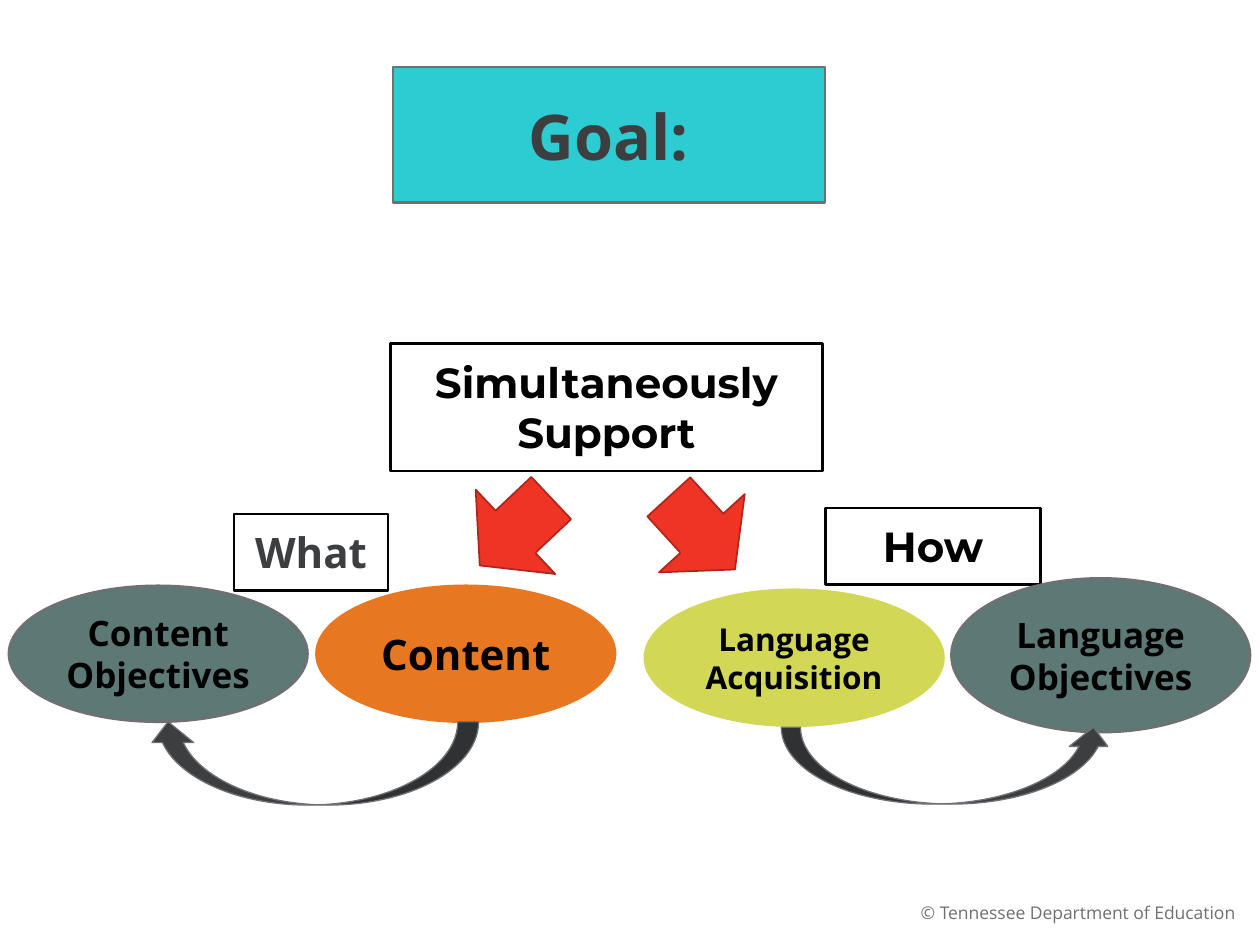
from pptx import Presentation
from pptx.dml.color import RGBColor
from pptx.enum.shapes import MSO_SHAPE as SHAPE
from pptx.enum.text import MSO_ANCHOR as ANCHOR, PP_ALIGN as ALIGN
from pptx.util import Cm, Pt

WHITE = RGBColor(0xFF, 0xFF, 0xFF)
BLACK = RGBColor(0, 0, 0)
CHARCOAL = RGBColor(0x3C, 0x3E, 0x40)
GRAY = RGBColor(0x6E, 0x70, 0x73)
TEAL = RGBColor(0x2D, 0xCC, 0xD3)
SLATE = RGBColor(0x5D, 0x79, 0x75)
ORANGE = RGBColor(0xE8, 0x77, 0x22)
LIME = RGBColor(0xD2, 0xD7, 0x55)
RED = RGBColor(0xEE, 0x34, 0x24)
DARK_RED = RGBColor(0xB0, 0x26, 0x1B)

SANS, DISPLAY = "Open Sans", "Montserrat"
OVAL_W, OVAL_H = 6.02, 2.74


def add_shape(slide, kind, box, fill, line, width=1.5):
    """Add a flat preset shape; box is left, top, width, height in cm."""
    sp = slide.shapes.add_shape(kind, *map(Cm, box))
    sp.shadow.inherit = False
    if fill is None:
        sp.fill.background()
    else:
        sp.fill.solid()
        sp.fill.fore_color.rgb = fill
    sp.line.color.rgb = line
    sp.line.width = Pt(width)
    return sp


def set_text(sp, text, size, color=BLACK, font=SANS, bold=True,
             align=ALIGN.CENTER, anchor=ANCHOR.MIDDLE):
    tf = sp.text_frame
    tf.word_wrap = True
    tf.vertical_anchor = anchor
    tf.margin_left = tf.margin_right = Cm(0.25)
    tf.margin_top = tf.margin_bottom = Cm(0.25)
    p = tf.paragraphs[0]
    p.text = text
    p.alignment = align
    p.font.name = font
    p.font.size = Pt(size)
    p.font.bold = bold
    p.font.color.rgb = color
    return p


def add_title(slide, box):
    sp = add_shape(slide, SHAPE.RECTANGLE, box, TEAL, GRAY)
    set_text(sp, "Goal:", 36, CHARCOAL)


def add_outlined_label(slide, box, text, color=BLACK, font=DISPLAY):
    sp = add_shape(slide, SHAPE.RECTANGLE, box, None, BLACK)
    set_text(sp, text, 24, color, font, anchor=ANCHOR.TOP)


def add_oval(slide, box, text, size, fill, line):
    set_text(add_shape(slide, SHAPE.OVAL, box, fill, line), text, size)


def add_curved_arrow(slide, box, flip=False):
    sp = add_shape(slide, SHAPE.CURVED_UP_ARROW, box, CHARCOAL, GRAY, 0.75)
    if flip:
        sp._element.spPr.xfrm.set("flipH", "1")


def add_red_arrow(slide, left, top, rotation):
    sp = add_shape(slide, SHAPE.RIGHT_ARROW, (left, top, 1.98, 2.34),
                   RED, DARK_RED, 1)
    sp.rotation = rotation


def add_content_branch(slide, x, y):
    add_outlined_label(slide, (x + 4.54, y + 0.81, 3.1, 1.55),
                       "What", CHARCOAL, SANS)
    add_oval(slide, (x + 6.2, y + 2.26, OVAL_W, OVAL_H),
             "Content", 24, ORANGE, ORANGE)
    add_oval(slide, (x, y + 2.26, OVAL_W, OVAL_H),
             "Content Objectives", 20, SLATE, GRAY)
    add_curved_arrow(slide, (x + 2.79, y + 5, 6.68, 1.68), flip=True)
    add_red_arrow(slide, x + 9.22, y, 136.7)


def add_language_branch(slide, x, y):
    add_outlined_label(slide, (x + 3.64, y + 0.66, 4.34, 1.55), "How")
    add_oval(slide, (x, y + 2.31, OVAL_W, OVAL_H),
             "Language Acquisition", 18, LIME, LIME)
    add_oval(slide, (x + 6.18, y + 2.08, OVAL_W, 3.1),
             "Language Objectives", 20, SLATE, GRAY)
    add_curved_arrow(slide, (x + 2.75, y + 5.08, 6.68, 1.55))
    add_red_arrow(slide, x + 0.16, y, 47.6)


def add_footer(slide, box):
    tb = slide.shapes.add_textbox(*map(Cm, box))
    p = set_text(tb, "© Tennessee Department of Education", 10, GRAY,
                 bold=False, align=ALIGN.RIGHT)
    p.line_spacing = 0.9
    tb.text_frame.margin_top = tb.text_frame.margin_bottom = 0


def main():
    prs = Presentation()
    prs.slide_width, prs.slide_height = Cm(25.4), Cm(19.05)
    slide = prs.slides.add_slide(prs.slide_layouts[6])
    slide.background.fill.solid()
    slide.background.fill.fore_color.rgb = WHITE

    add_footer(slide, (17.2, 18.11, 7.95, 0.64))
    add_title(slide, (7.92, 1.35, 8.71, 2.74))
    add_content_branch(slide, 0.18, 9.55)
    add_language_branch(slide, 13, 9.58)
    add_outlined_label(slide, (7.87, 6.93, 8.71, 2.57),
                       "Simultaneously Support")
    prs.save("out.pptx")


if __name__ == "__main__":
    main()
